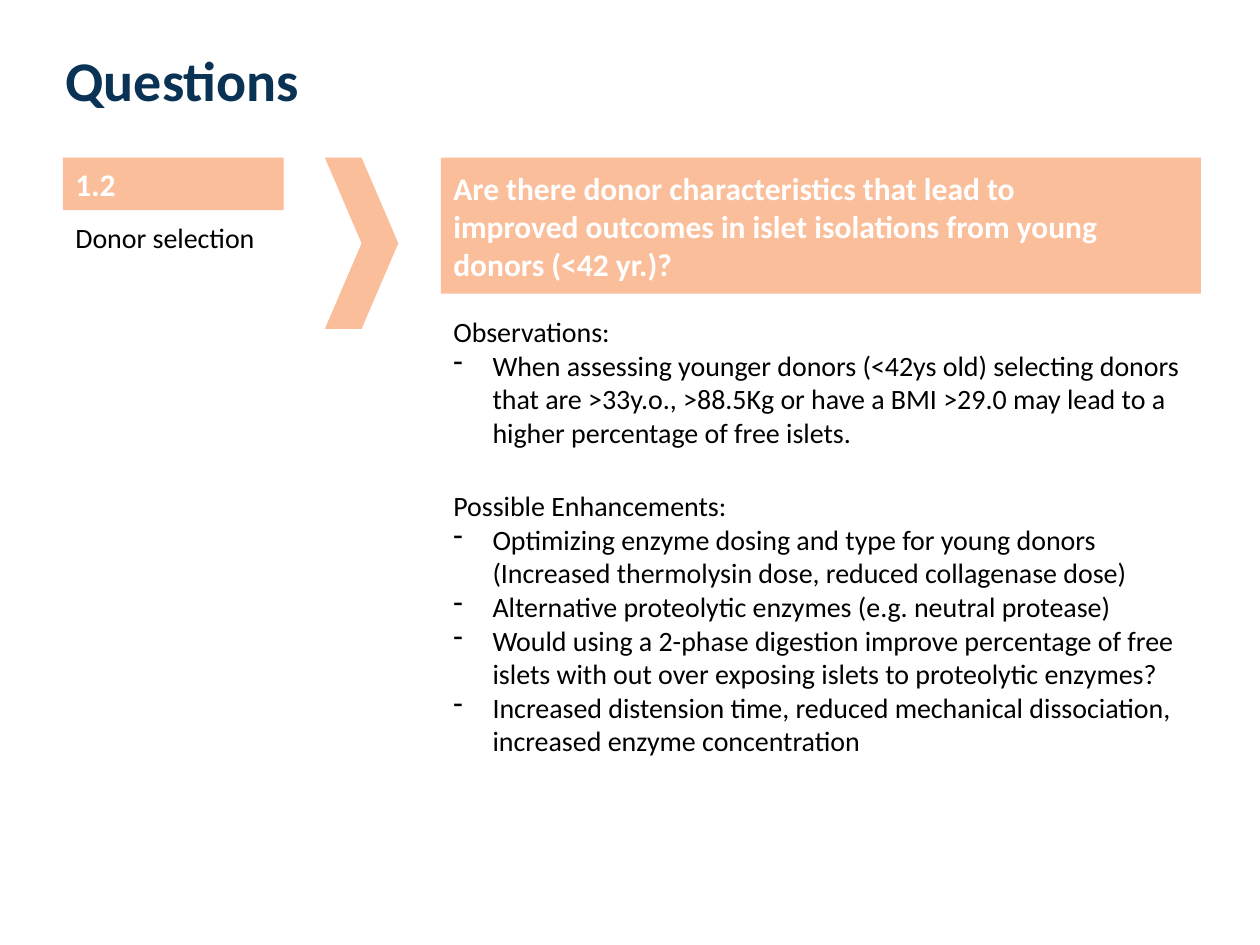
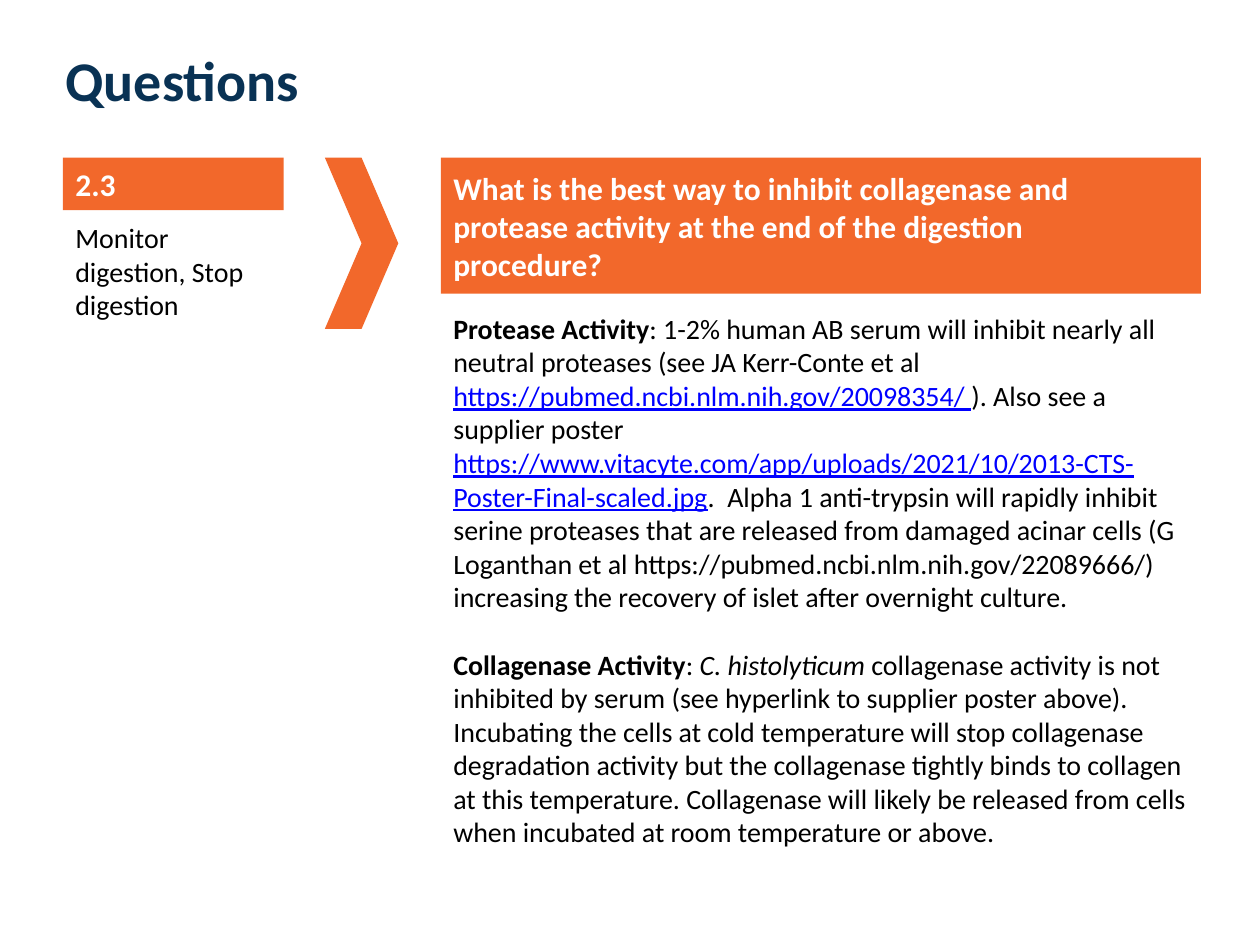
import lxml.etree
import pptx
import pptx.dml.color
import pptx.enum.shapes
import pptx.enum.text
import pptx.oxml.ns
import pptx.util

Cm, Pt = pptx.util.Cm, pptx.util.Pt
RGB = pptx.dml.color.RGBColor.from_string
KIND = pptx.enum.shapes.MSO_SHAPE
ANCHOR = pptx.enum.text.MSO_ANCHOR
FIT = pptx.enum.text.MSO_AUTO_SIZE
qn = pptx.oxml.ns.qn

COLOURS = {"navy": "093254", "peach": "FBBE9A", "orange": "F2682B",
           "white": "FFFFFF", "black": "000000", "link": "0000FF"}

TITLE = {"size": Pt(32), "bold": True, "colour": "navy"}
HEAD = {"size": Pt(18), "bold": True, "colour": "white"}
BODY = {"size": Pt(16), "bold": False, "colour": "black"}
BOLD = {"bold": True}
ITALIC = {"italic": True}
LINK = {"underline": True, "colour": "link"}

LEFT, MID, RIGHT = 1.27, 6.55, 8.89
TOP, WIDE, SIDE = 3.18, 15.32, 4.45
HANG = Cm(0.79)


def write(frame, paras, base, gap=0):
    """Fill a frame. A paragraph is a list of (text, format) runs;
    text starting with "- " is a hanging list item, "\\n" a line break."""
    frame.word_wrap = True
    for i, runs in enumerate(paras):
        para = frame.paragraphs[0] if i == 0 else frame.add_paragraph()
        para.alignment = pptx.enum.text.PP_ALIGN.LEFT
        if i and gap:
            para.space_before = Pt(gap)
        if runs[0][0].startswith("- "):
            runs = [(runs[0][0][2:], runs[0][1])] + runs[1:]
            props = para._p.get_or_add_pPr()
            props.set("marL", str(HANG))
            props.set("indent", str(-HANG))
            lxml.etree.SubElement(props, qn("a:buChar")).set("char", "-")
        for text, extra in runs:
            if text == "\n":
                para.add_line_break()
                continue
            run = para.add_run()
            run.text = text
            look = {"name": "Calibri", **base, **extra}
            run.font.color.rgb = RGB(COLOURS[look.pop("colour")])
            for key, value in look.items():
                setattr(run.font, key, value)


def block(slide, kind, box, fill):
    shape = slide.shapes.add_shape(kind, *map(Cm, box))
    shape.shadow.inherit = False
    shape.fill.solid()
    shape.fill.fore_color.rgb = RGB(COLOURS[fill])
    shape.line.fill.background()
    return shape


PAGES = [
    {
        "fill": "peach", "code": "1.2", "topic": "Donor selection",
        "ask": ["Are there donor characteristics that lead to ", "\n",
                "improved outcomes in islet isolations from young donors (<42 yr.)?"],
        "notes": [
            (6.22, 3.68, [
                [("Observations:", {})],
                [("- When assessing younger donors (<42ys old) selecting donors that are "
                  ">33y.o., >88.5Kg or have a BMI >29.0 may lead to a higher percentage "
                  "of free islets.", {})],
            ]),
            (9.73, 5.74, [
                [("Possible Enhancements:", {})],
                [("- Optimizing enzyme dosing and type for young donors (Increased "
                  "thermolysin dose, reduced collagenase dose)", {})],
                [("- Alternative proteolytic enzymes (e.g. neutral protease)", {})],
                [("- Would using a 2-phase digestion improve percentage of free islets "
                  "with out over exposing islets to proteolytic enzymes?", {})],
                [("- Increased distension time, reduced mechanical dissociation, "
                  "increased enzyme concentration", {})],
            ]),
        ],
        "gap": 0,
    },
    {
        "fill": "orange", "code": "2.3", "topic": "Monitor digestion, Stop digestion",
        "ask": ["What is the best way to inhibit collagenase and protease activity "
                "at the end of the digestion ", "\n", "procedure?"],
        "notes": [
            (6.15, 11.2, [
                [("Protease Activity", BOLD),
                 (": 1-2% human AB serum will inhibit nearly all neutral proteases "
                  "(see JA Kerr-Conte et al ", {}),
                 ("https://pubmed.ncbi.nlm.nih.gov/20098354/ ", LINK),
                 ("). Also see a supplier poster ", {}),
                 ("https://www.vitacyte.com/app/uploads/2021/10/"
                  "2013-CTS-Poster-Final-scaled.jpg", LINK),
                 (".  Alpha 1 anti-trypsin will rapidly inhibit serine proteases that are "
                  "released from damaged acinar cells (G Loganthan et al "
                  "https://pubmed.ncbi.nlm.nih.gov/22089666/) increasing the recovery of "
                  "islet after overnight culture.", {})],
                [("Collagenase Activity", BOLD), (": ", {}),
                 ("C. histolyticum ", ITALIC),
                 ("collagenase activity is not inhibited by serum (see hyperlink to "
                  "supplier poster above). Incubating the cells at cold temperature will "
                  "stop collagenase degradation activity but the collagenase tightly binds "
                  "to collagen at this temperature. Collagenase will likely be released "
                  "from cells when incubated at room temperature or above.", {})],
            ]),
        ],
        "gap": 19.2,
    },
]

deck = pptx.Presentation()
deck.slide_width, deck.slide_height = Cm(25.4), Cm(19.05)

for page in PAGES:
    slide = deck.slides.add_slide(deck.slide_layouts[6])

    title = slide.shapes.add_textbox(Cm(1.07), 0, Cm(22.86), Cm(TOP)).text_frame
    title.vertical_anchor = ANCHOR.MIDDLE
    write(title, [[("Questions", {})]], TITLE)

    ask = block(slide, KIND.RECTANGLE, (RIGHT, TOP, WIDE, 2.74), page["fill"]).text_frame
    ask.vertical_anchor = ANCHOR.MIDDLE
    write(ask, [[(text, {}) for text in page["ask"]]], HEAD)

    block(slide, KIND.RECTANGLE, (LEFT, TOP, SIDE, 1.06), page["fill"])
    block(slide, KIND.CHEVRON, (MID, TOP, 1.48, 3.45), page["fill"])

    texts = [((LEFT, 3.2, 3.81, 1.02), [[(page["code"], {})]], HEAD),
             ((LEFT, 4.32, SIDE, 0.94), [[(page["topic"], {})]], BODY)]
    texts += [((RIGHT, top, WIDE, tall), paras, BODY)
              for top, tall, paras in page["notes"]]
    for box, paras, base in texts:
        frame = slide.shapes.add_textbox(*map(Cm, box)).text_frame
        write(frame, paras, base, page["gap"])
        frame.auto_size = FIT.SHAPE_TO_FIT_TEXT

deck.save("out.pptx")
